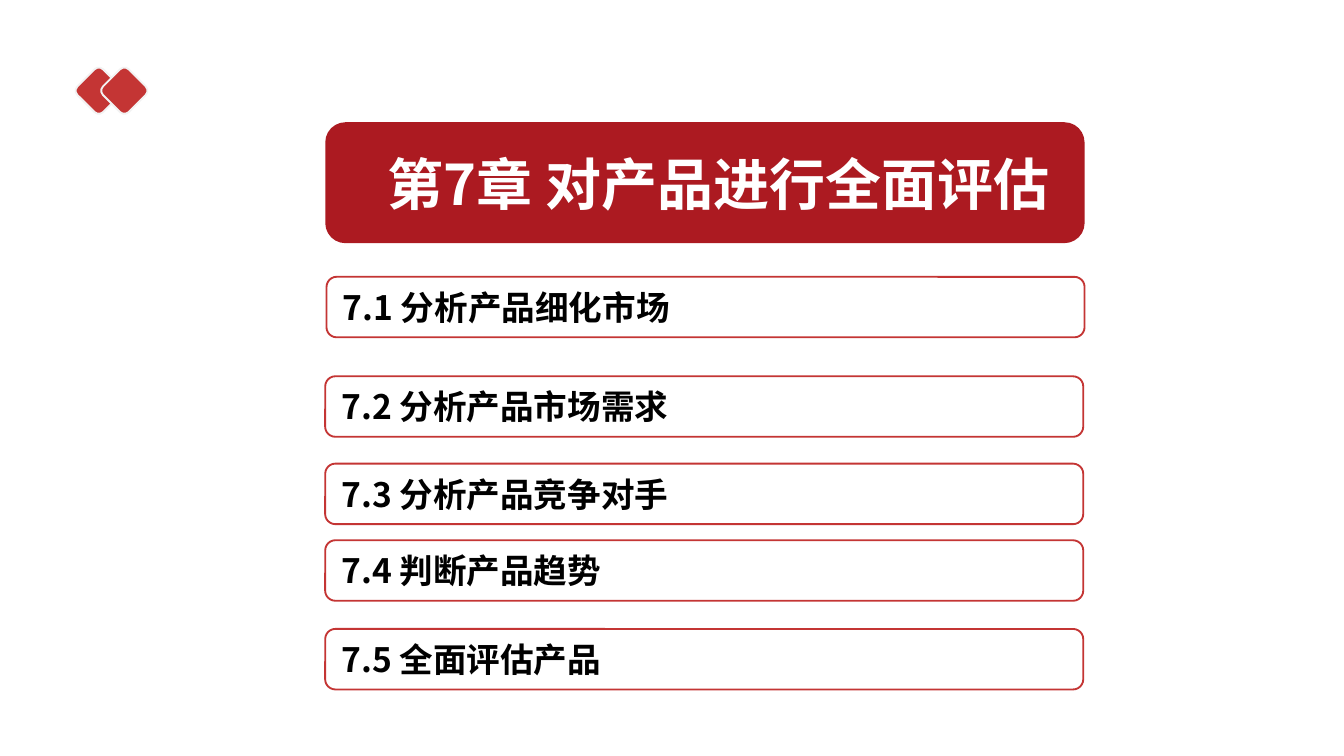
from pptx import Presentation
from pptx.util import Inches, Pt
from pptx.dml.color import RGBColor
from pptx.enum.shapes import MSO_SHAPE
from pptx.enum.text import PP_ALIGN, MSO_ANCHOR
from pptx.oxml.ns import qn
from lxml import etree

FACE = "Noto Sans CJK SC"
RED, DARK, WHITE, BLACK = "C43534", "AC1A21", "FFFFFF", "000000"


def paint(color, tint):
    color.rgb = RGBColor.from_string(tint)


def draw(slide, box, fill, line=None):
    shape = slide.shapes.add_shape(MSO_SHAPE.ROUNDED_RECTANGLE, *map(Inches, box))
    shape.shadow.inherit = False
    shape.fill.solid()
    paint(shape.fill.fore_color, fill)
    if line:
        paint(shape.line.color, line)
        shape.line.width = Pt(1)
    else:
        shape.line.fill.background()
    return shape


def write(shape, text, size, tint, align, inset):
    frame = shape.text_frame
    frame.text = text
    frame.word_wrap = True
    frame.vertical_anchor = MSO_ANCHOR.MIDDLE
    frame.margin_left = frame.margin_right = Inches(inset)
    frame.margin_top = frame.margin_bottom = Inches(0.05)
    para = frame.paragraphs[0]
    para.alignment = align
    font = para.runs[0].font
    font.size, font.bold, font.name = Pt(size), True, FACE
    paint(font.color, tint)
    props = para.runs[0]._r.get_or_add_rPr()
    etree.SubElement(props, qn("a:ea")).set("typeface", FACE)


def mark(slide, left, top, side):
    for step in range(2):
        tile = draw(slide, (left + step * 0.19, top, side, side), RED, "F2F2F2")
        tile.rotation = 45


def banner(slide, box, text):
    left, top, width, height = box
    panel = draw(slide, box, DARK)
    title = slide.shapes.title
    title.left, title.top = Inches(left + 0.26), Inches(top + 0.15)
    title.width, title.height = Inches(width - 0.32), Inches(height - 0.3)
    title.fill.solid()
    paint(title.fill.fore_color, DARK)
    write(title, text, 30, WHITE, PP_ALIGN.CENTER, 0.05)
    panel.element.addnext(title.element)


def topic(slide, box, text):
    bar = draw(slide, box, WHITE, RED)
    write(bar, text, 18, BLACK, PP_ALIGN.LEFT, 0.1)


def main():
    deck = Presentation()
    deck.slide_width, deck.slide_height = Inches(10), Inches(5.625)
    slide = deck.slides.add_slide(deck.slide_layouts[5])
    mark(slide, 0.6, 0.54, 0.27)
    banner(slide, (2.42, 0.91, 5.65, 0.9), "第7章 对产品进行全面评估")
    topics = [
        (2.43, 2.06, "7.1 分析产品细化市场"),
        (2.42, 2.8, "7.2 分析产品市场需求"),
        (2.42, 3.45, "7.3 分析产品竞争对手"),
        (2.42, 4.02, "7.4 判断产品趋势"),
        (2.42, 4.68, "7.5 全面评估产品"),
    ]
    for left, top, text in topics:
        topic(slide, (left, top, 5.64, 0.45), text)
    deck.save("out.pptx")


if __name__ == "__main__":
    main()
